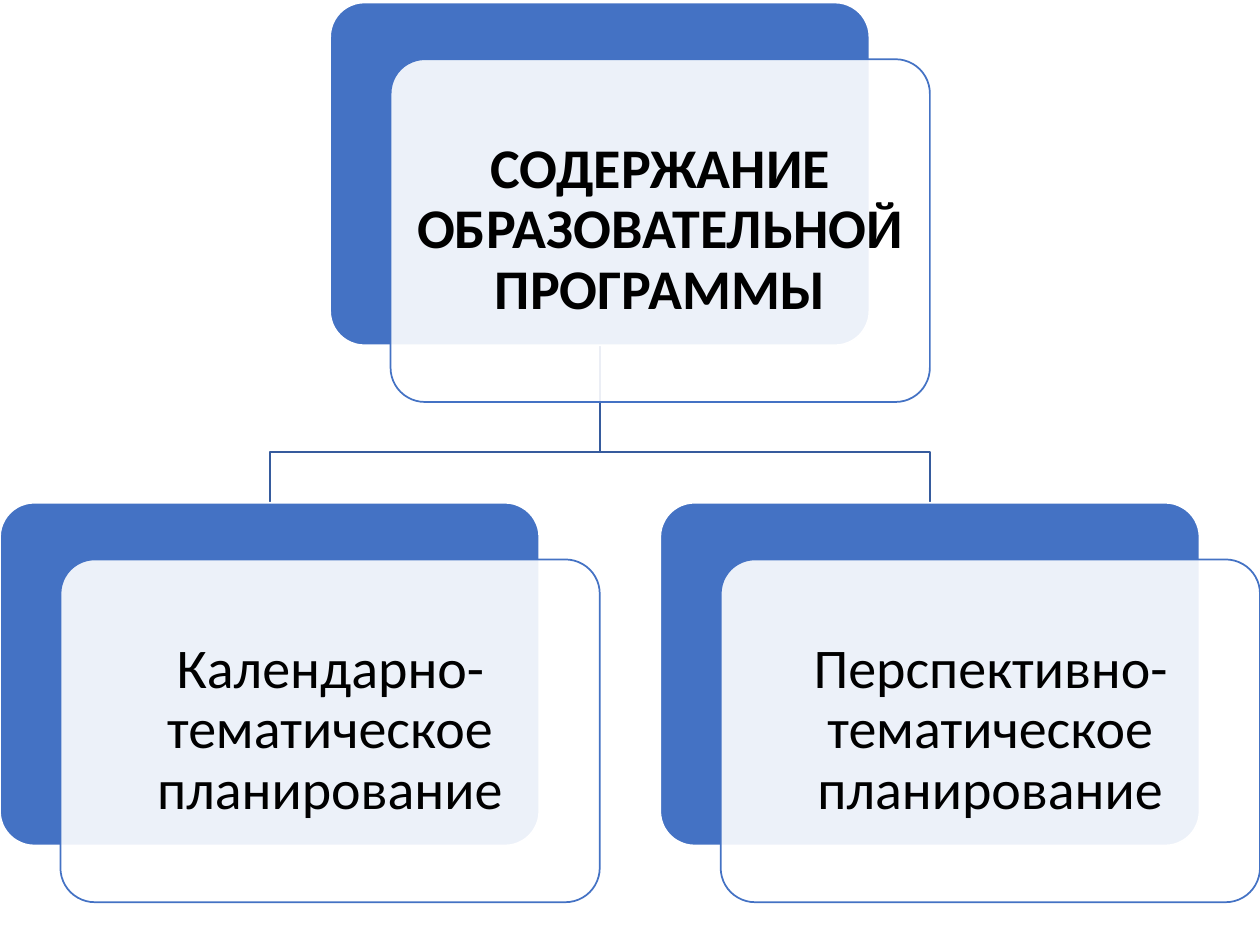
from dataclasses import dataclass

from lxml.etree import SubElement
from pptx import Presentation
from pptx.dml.color import RGBColor
from pptx.enum.shapes import MSO_SHAPE
from pptx.enum.text import MSO_ANCHOR, PP_ALIGN
from pptx.oxml.ns import qn
from pptx.util import Inches, Pt


@dataclass(frozen=True)
class Theme:
    blue: RGBColor = RGBColor(0x44, 0x72, 0xC4)
    branch: RGBColor = RGBColor(0x36, 0x5B, 0x9D)
    white: RGBColor = RGBColor(0xFF, 0xFF, 0xFF)
    text: RGBColor = RGBColor(0, 0, 0)
    font: str = "Calibri"
    size: Pt = Pt(32)
    line: Pt = Pt(1)


THEME = Theme()
NODE_WIDTH, NODE_HEIGHT = 4.28, 2.72
CARD_SHIFT_X, CARD_SHIFT_Y = 0.48, 0.45
BEND_Y = 3.59

# Left, top and wording of each node
ROOT = (2.62, 0.02, "СОДЕРЖАНИЕ ОБРАЗОВАТЕЛЬНОЙ ПРОГРАММЫ")
CHILDREN = [
    (0, 3.99, "Календарно-тематическое планирование"),
    (5.24, 3.99, "Перспективно-тематическое планирование"),
]


def add_panel(page, left, top, fill, line):
    panel = page.shapes.add_shape(
        MSO_SHAPE.ROUNDED_RECTANGLE,
        Inches(left), Inches(top), Inches(NODE_WIDTH), Inches(NODE_HEIGHT))
    panel.adjustments[0] = 0.1
    panel.shadow.inherit = False
    panel.fill.solid()
    panel.fill.fore_color.rgb = fill
    panel.line.color.rgb = line
    panel.line.width = THEME.line
    return panel


def set_opacity(shape, percent):
    color = shape.fill._xPr.find(qn("a:solidFill"))[0]
    SubElement(color, qn("a:alpha"), val=str(percent * 1000))


def write_label(box, text, bold):
    frame = box.text_frame
    frame.word_wrap = True
    frame.vertical_anchor = MSO_ANCHOR.MIDDLE
    # The rounded corners add their own inset to this margin
    frame.margin_left = frame.margin_right = Inches(0.05)
    frame.margin_top = frame.margin_bottom = Inches(0.05)
    para = frame.paragraphs[0]
    para.alignment = PP_ALIGN.CENTER
    para.line_spacing = 0.9
    span = para.add_run()
    span.text = text
    span.font.name = THEME.font
    span.font.size = THEME.size
    span.font.bold = bold
    span.font.color.rgb = THEME.text


def add_node(page, left, top, text, bold=False):
    add_panel(page, left, top, THEME.blue, THEME.white)
    card = add_panel(page, left + CARD_SHIFT_X, top + CARD_SHIFT_Y,
                     THEME.white, THEME.blue)
    set_opacity(card, 90)
    write_label(card, text, bold)


def add_branch(page, parent, child):
    start_x = Inches(parent[0] + NODE_WIDTH / 2)
    end_x = Inches(child[0] + NODE_WIDTH / 2)
    bend_y = Inches(BEND_Y)
    builder = page.shapes.build_freeform(
        start_x, Inches(parent[1] + NODE_HEIGHT))
    builder.add_line_segments(
        [(start_x, bend_y), (end_x, bend_y), (end_x, Inches(child[1]))],
        close=False)
    branch = builder.convert_to_shape()
    branch.shadow.inherit = False
    branch.fill.background()
    branch.line.color.rgb = THEME.branch
    branch.line.width = THEME.line


def main():
    deck = Presentation()
    deck.slide_width, deck.slide_height = Inches(10), Inches(7.5)
    page = deck.slides.add_slide(deck.slide_layouts[6])

    # Branches lie behind the nodes
    for child in CHILDREN:
        add_branch(page, ROOT, child)

    # Programme at the top, its two kinds of planning below
    add_node(page, *ROOT, bold=True)
    for child in CHILDREN:
        add_node(page, *child)

    deck.save("out.pptx")


if __name__ == "__main__":
    main()
